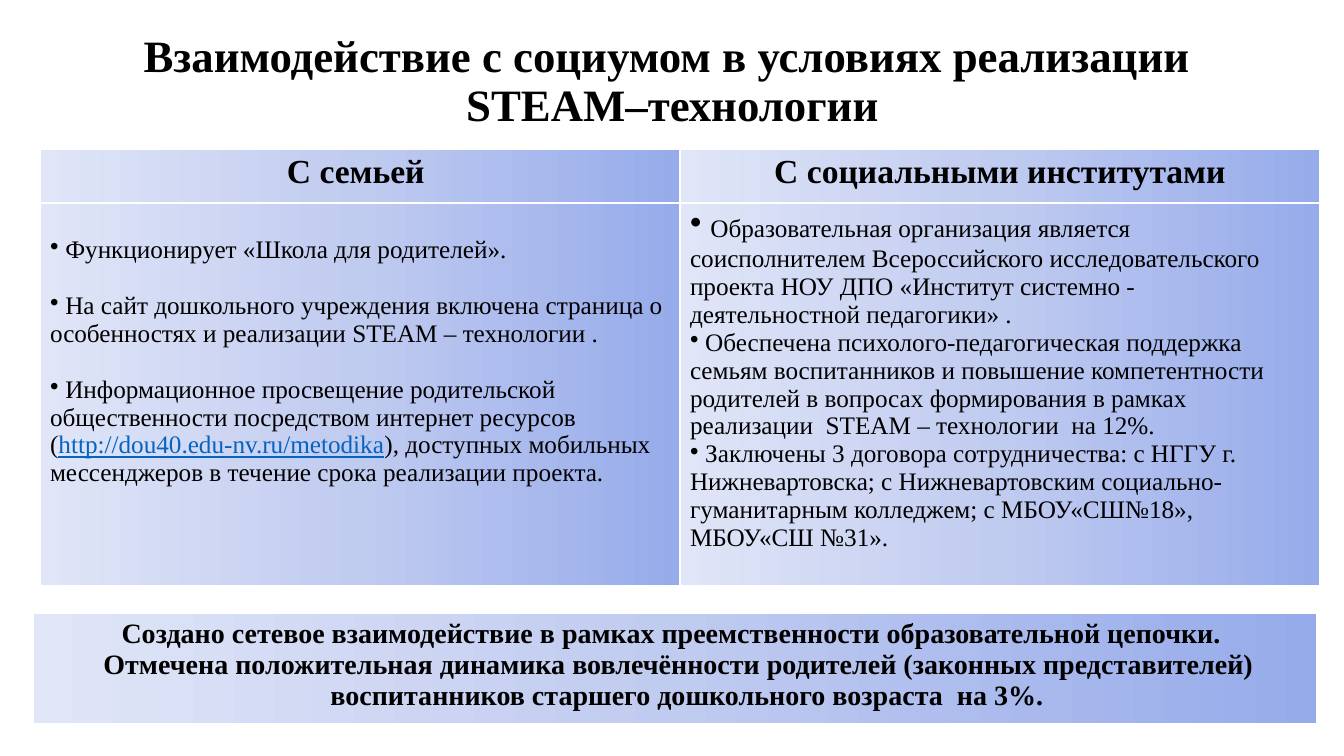
"""Build the slide on working with families and social institutions."""
from copy import deepcopy

from lxml.etree import SubElement
from pptx import Presentation
from pptx.dml.color import RGBColor as RGB
from pptx.enum.text import MSO_ANCHOR as ANCHOR, PP_ALIGN as ALIGN
from pptx.oxml.ns import qn
from pptx.util import Emu, Pt

BLACK = RGB(0, 0, 0)
LINK = RGB(0x05, 0x63, 0xC1)
SHADES = [RGB(0x96, 0xAB, 0xEA), RGB(0xC0, 0xCB, 0xF0), RGB(0xE0, 0xE5, 0xF7)]
FACE = "Times New Roman"


def px(n):
    return Emu(round(n * 914400 / 100.8))


def style(par, size, bold, align):
    par.alignment = align
    for run in par.runs:
        font = run.font
        font.name, font.size, font.bold = FACE, Pt(size), bold
        font.color.rgb = BLACK


prs = Presentation()
prs.slide_width, prs.slide_height = px(1344), px(756)
slide = prs.slides.add_slide(prs.slide_layouts[6])

title = slide.shapes.add_textbox(px(93), px(40), px(1159), px(85)).text_frame
title.word_wrap = True
title.vertical_anchor = ANCHOR.MIDDLE
title.text = "Взаимодействие с социумом в условиях реализации \vSTEAM–технологии"
title.paragraphs[0].line_spacing = 0.9
style(title.paragraphs[0], 32, True, ALIGN.CENTER)

main = slide.shapes.add_table(2, 2, px(40), px(149), px(1280), px(408)).table
main.rows[0].height, main.rows[1].height = px(54), px(354)
total = slide.shapes.add_table(1, 1, px(33), px(613), px(1284), px(103)).table

for table in (main, total):
    table.horz_banding = False
    for cell in table.iter_cells():
        fill = cell.fill
        fill.gradient()
        fill.gradient_angle = 180
        stops = cell._tc.tcPr.find(".//" + qn("a:gsLst"))
        stops.append(deepcopy(stops[0]))
        for i, stop in enumerate(fill.gradient_stops):
            stop.position = i / 2
            stop.color.rgb = SHADES[i]

for col, head in enumerate(["С семьей ", "С социальными институтами"]):
    frame = main.cell(0, col).text_frame
    frame.text = head
    style(frame.paragraphs[0], 24, True, ALIGN.CENTER)

family = [
    ["Функционирует «Школа для родителей»."],
    ["На сайт дошкольного учреждения включена страница о особенностях "
     "и реализации STEAM – технологии ."],
    ["Информационное просвещение родительской общественности "
     "посредством интернет ресурсов (",
     "http://dou40.edu-nv.ru/metodika",
     "), доступных мобильных мессенджеров в течение срока реализации проекта."],
]
social = [
    ["Образовательная организация является соисполнителем Всероссийского "
     "исследовательского проекта НОУ ДПО «Институт системно - "
     "деятельностной педагогики» ."],
    ["Обеспечена психолого-педагогическая поддержка семьям воспитанников "
     "и повышение компетентности родителей в вопросах формирования в рамках "
     "реализации  STEAM – технологии  на 12%."],
    ["Заключены 3 договора сотрудничества: с НГГУ г. Нижневартовска; "
     "с Нижневартовским социально-гуманитарным колледжем; "
     "с МБОУ«СШ№18», МБОУ«СШ №31»."],
]
for col, (items, gap) in enumerate([(family, 28), (social, 0)]):
    cell = main.cell(1, col)
    cell.margin_top = px(5 + gap)
    frame = cell.text_frame
    for i, parts in enumerate(items):
        par = frame.add_paragraph() if i else frame.paragraphs[0]
        par.space_before = px(gap if i else 0)
        SubElement(par._p.get_or_add_pPr(), qn("a:buChar"), char="•")
        for text in [" "] + parts:
            par.add_run().text = text
        style(par, 18, False, ALIGN.LEFT)

link = main.cell(1, 0).text_frame.paragraphs[2].runs[2].font
link.color.rgb = LINK
link.underline = True
main.cell(1, 1).text_frame.paragraphs[0].runs[0].font.size = Pt(24)

frame = total.cell(0, 0).text_frame
frame.text = (
    "Создано сетевое взаимодействие в рамках преемственности "
    "образовательной цепочки. \n"
    " Отмечена положительная динамика вовлечённости родителей (законных "
    "представителей) воспитанников старшего дошкольного возраста  на 3%. "
)
for par in frame.paragraphs:
    props = par._p.get_or_add_pPr()
    props.set("marL", str(px(31)))
    props.set("indent", str(px(-31)))
    style(par, 20, True, ALIGN.CENTER)

prs.save("out.pptx")
